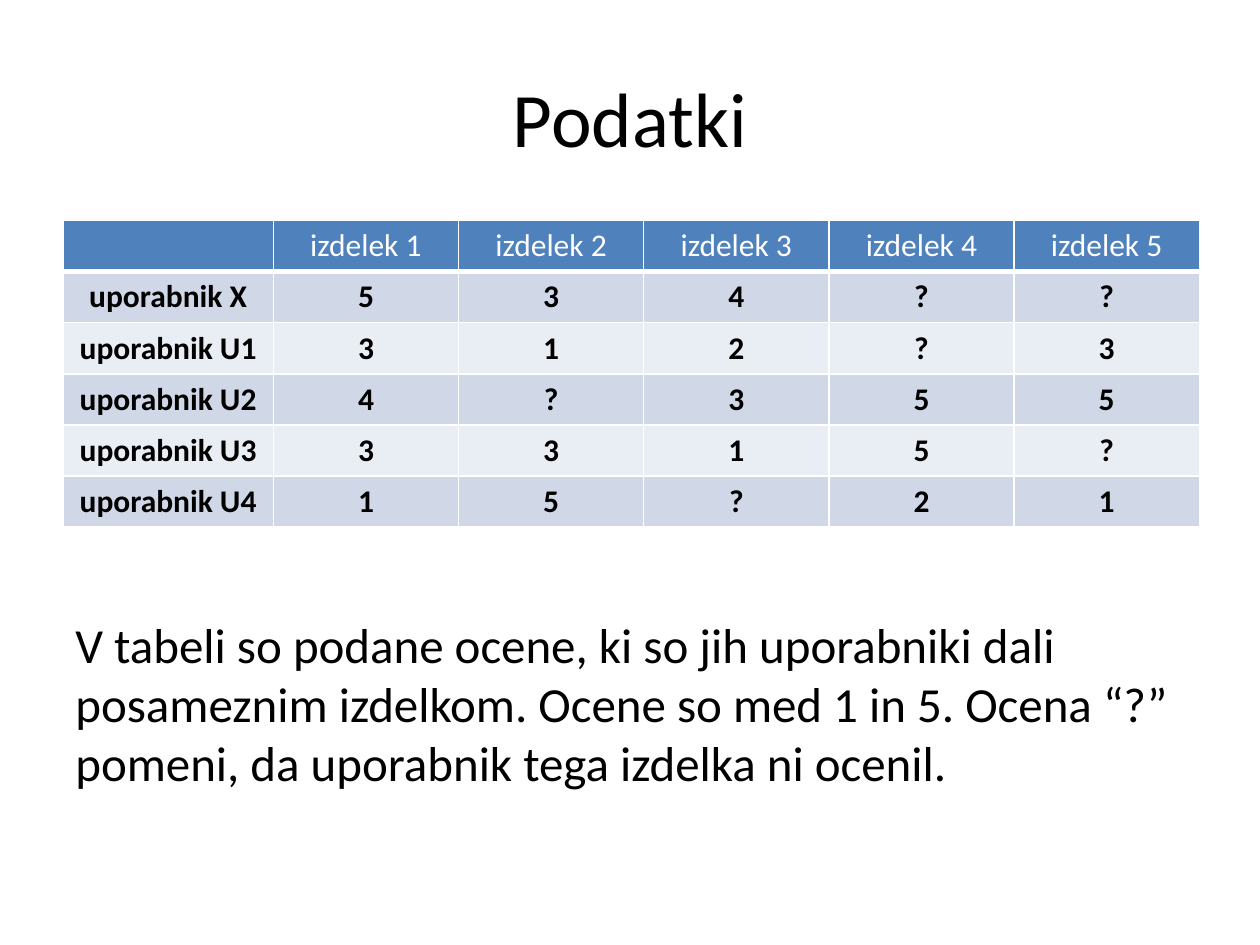
from lxml import etree
from pptx import Presentation
from pptx.dml.color import RGBColor
from pptx.enum.text import MSO_ANCHOR, PP_ALIGN
from pptx.oxml.ns import qn
from pptx.util import Inches, Pt

CENTER, LEFT = PP_ALIGN.CENTER, PP_ALIGN.LEFT
MIDDLE, TOP = MSO_ANCHOR.MIDDLE, MSO_ANCHOR.TOP
TITLE_ONLY_LAYOUT = 5

# Content
TITLE = "Podatki"
RATINGS = [
    ("", "izdelek 1", "izdelek 2", "izdelek 3", "izdelek 4", "izdelek 5"),
    ("uporabnik X", "5", "3", "4", "?", "?"),
    ("uporabnik U1", "3", "1", "2", "?", "3"),
    ("uporabnik U2", "4", "?", "3", "5", "5"),
    ("uporabnik U3", "3", "3", "1", "5", "?"),
    ("uporabnik U4", "1", "5", "?", "2", "1"),
]
EXPLANATION = (
    "V tabeli so podane ocene, ki so jih uporabniki dali posameznim izdelkom. "
    "Ocene so med 1 in 5. Ocena “?” pomeni, da uporabnik tega izdelka ni ocenil."
)

# Theme and layout
THEME = {
    "font": "Calibri",
    "text": "000000",
    "white": "FFFFFF",
    "header": "4F81BD",
    "bands": ("D0D8E8", "E9EDF4"),
    "title_size": 44,
    "table_size": 18,
    "body_size": 28,
}
MARGIN, CONTENT_WIDTH = 0.5, 9
TABLE_TOP, ROW_HEIGHT = 1.75, 0.405
USER_WIDTH, PRODUCT_WIDTH = 1.67, 1.47


def style_paragraph(paragraph, size, color, alignment, bold=False):
    paragraph.alignment = alignment
    font = paragraph.font
    font.name, font.size, font.bold = THEME["font"], Pt(size), bold
    font.color.rgb = RGBColor.from_string(color)


def set_borders(cell, bottom_width):
    properties = cell._tc.get_or_add_tcPr()
    widths = {"a:lnL": 1, "a:lnR": 1, "a:lnT": 1, "a:lnB": bottom_width}
    for position, (tag, width) in enumerate(widths.items()):
        line = etree.Element(qn(tag), w=str(Pt(width)))
        fill = etree.SubElement(line, qn("a:solidFill"))
        etree.SubElement(fill, qn("a:srgbClr"), val=THEME["white"])
        properties.insert(position, line)


def add_title(slide):
    title = slide.shapes.title
    title.left, title.top = Inches(MARGIN), Inches(0.3)
    title.width, title.height = Inches(CONTENT_WIDTH), Inches(1.25)
    title.text_frame.text = TITLE
    title.text_frame.vertical_anchor = MIDDLE
    style_paragraph(title.text_frame.paragraphs[0], THEME["title_size"], THEME["text"], CENTER)


def add_ratings_table(slide):
    row_count, column_count = len(RATINGS), len(RATINGS[0])
    table = slide.shapes.add_table(
        row_count, column_count, Inches(MARGIN), Inches(TABLE_TOP),
        Inches(CONTENT_WIDTH), Inches(ROW_HEIGHT * row_count),
    ).table
    for index, column in enumerate(table.columns):
        column.width = Inches(PRODUCT_WIDTH if index else USER_WIDTH)

    for row_index, values in enumerate(RATINGS):
        is_header = row_index == 0
        fill = THEME["header"] if is_header else THEME["bands"][(row_index - 1) % 2]
        color = THEME["white"] if is_header else THEME["text"]
        for column_index, value in enumerate(values):
            cell = table.cell(row_index, column_index)
            cell.text = value
            cell.fill.solid()
            cell.fill.fore_color.rgb = RGBColor.from_string(fill)
            set_borders(cell, bottom_width=3 if is_header else 1)
            style_paragraph(cell.text_frame.paragraphs[0], THEME["table_size"],
                            color, CENTER, bold=not is_header)


def add_explanation(slide):
    box = slide.shapes.add_textbox(
        Inches(MARGIN), Inches(4.83), Inches(CONTENT_WIDTH), Inches(1.82))
    frame = box.text_frame
    frame.word_wrap = True
    frame.vertical_anchor = TOP
    frame.text = EXPLANATION
    style_paragraph(frame.paragraphs[0], THEME["body_size"], THEME["text"], LEFT)


def main():
    presentation = Presentation()
    presentation.slide_width, presentation.slide_height = Inches(10), Inches(7.5)
    slide = presentation.slides.add_slide(presentation.slide_layouts[TITLE_ONLY_LAYOUT])
    add_title(slide)
    add_ratings_table(slide)
    add_explanation(slide)
    presentation.save("out.pptx")


if __name__ == "__main__":
    main()
